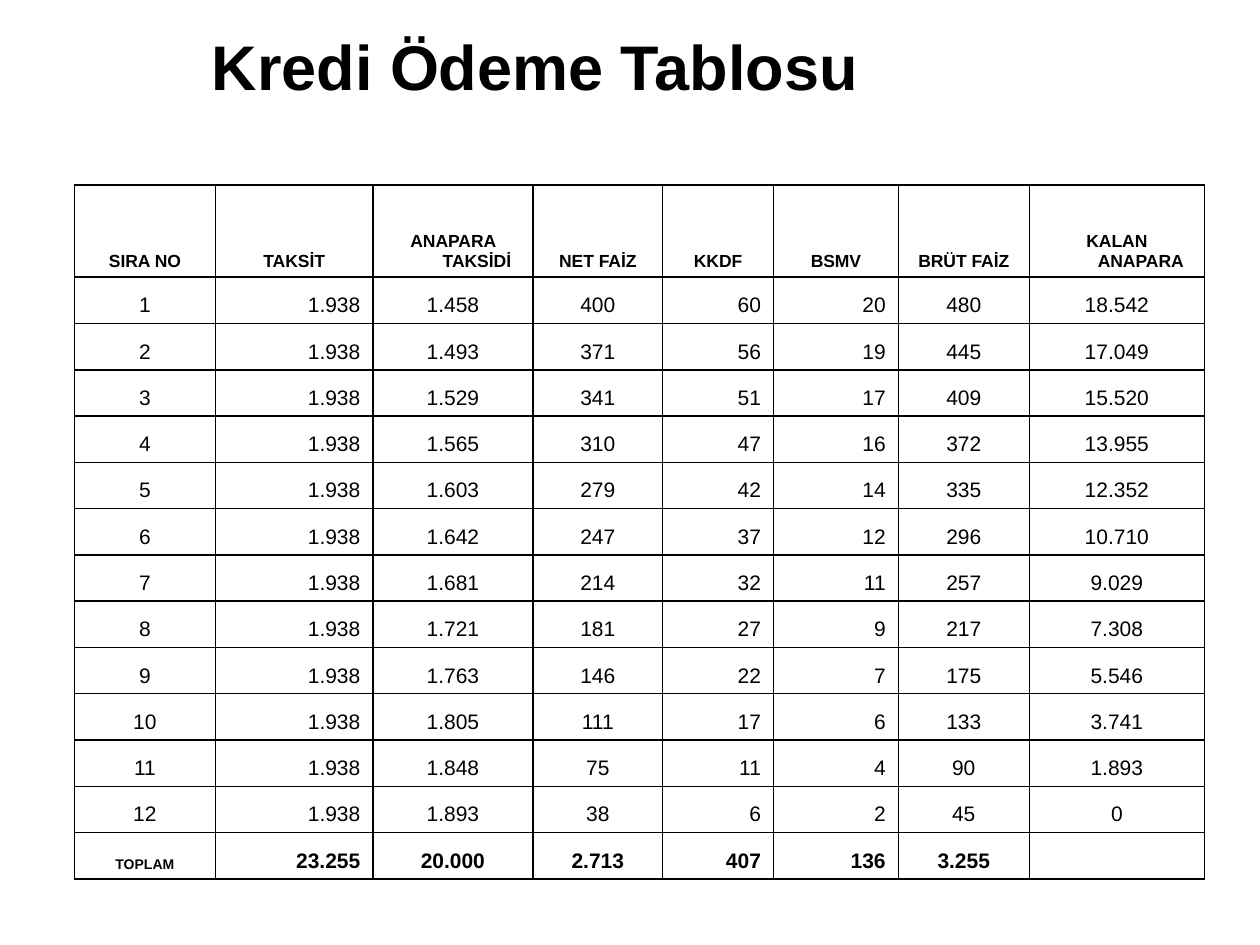
from lxml import etree
from pptx import Presentation, util as u
from pptx.dml.color import RGBColor
from pptx.enum import text as t
from pptx.oxml import ns

HEADS = ["SIRA NO", "TAKSİT", "ANAPARA TAKSİDİ", "NET FAİZ", "KKDF", "BSMV",
         "BRÜT FAİZ", "KALAN ANAPARA"]
LOANS = """1.458 400 60 20 480 18.542
1.493 371 56 19 445 17.049
1.529 341 51 17 409 15.520
1.565 310 47 16 372 13.955
1.603 279 42 14 335 12.352
1.642 247 37 12 296 10.710
1.681 214 32 11 257 9.029
1.721 181 27 9 217 7.308
1.763 146 22 7 175 5.546
1.805 111 17 6 133 3.741
1.848 75 11 4 90 1.893
1.893 38 6 2 45 0"""
TOTALS = ["TOPLAM", "23.255", "20.000", "2.713", "407", "136", "3.255", ""]
WIDTHS = [1.12, 1.25, 1.27, 1.03, 0.88, 0.99, 1.04, 1.39]
RIGHT = {1, 4, 5}
INK = "000000"


def color(code):
    """Turn a hex string into a colour."""
    return RGBColor.from_string(code)


def style(run, size, bold):
    """Format the font of a run."""
    look = {"name": "Arial", "size": u.Pt(size), "bold": bold}
    for key, value in look.items():
        setattr(run.font, key, value)
    run.font.color.rgb = color(INK)


def border(cell):
    """Draw a thin line on all four sides of a cell."""
    props = cell._tc.get_or_add_tcPr()
    for side in ("a:lnL", "a:lnR", "a:lnT", "a:lnB"):
        line = etree.SubElement(props, ns.qn(side), w=str(u.Pt(1)))
        fill = etree.SubElement(line, ns.qn("a:solidFill"))
        etree.SubElement(fill, ns.qn("a:srgbClr"), val=INK)


def write(cell, words, align, size, bold):
    """Fill one cell with bottom-aligned, hanging text."""
    border(cell)
    cell.fill.background()
    cell.margin_top = 0
    cell.vertical_anchor = t.MSO_ANCHOR.BOTTOM
    if not words:
        return
    para = cell.text_frame.paragraphs[0]
    para.alignment = align
    props = para._p.get_or_add_pPr()
    props.set("marL", str(u.Inches(0.38)))
    props.set("indent", str(u.Inches(-0.38)))
    run = para.add_run()
    run.text = words
    style(run, size, bold)


def title(slide, box):
    """Place the heading in the title placeholder."""
    shape = slide.shapes.title
    for key, value in zip(("left", "top", "width", "height"), box):
        setattr(shape, key, u.Inches(value))
    frame = shape.text_frame
    frame.vertical_anchor = t.MSO_ANCHOR.MIDDLE
    para = frame.paragraphs[0]
    para.alignment = t.PP_ALIGN.LEFT
    run = para.add_run()
    run.text = "Kredi Ödeme Tablosu"
    style(run, 36, True)


def plan(slide, box):
    """Place the payment table in its box."""
    loans = [[str(n), "1.938", *line.split()]
             for n, line in enumerate(LOANS.splitlines(), 1)]
    rows = [HEADS, *loans, TOTALS]
    last = len(rows) - 1
    table = slide.shapes.add_table(
        len(rows), len(HEADS), *map(u.Inches, box)).table
    for flag in ("first_row", "horz_banding"):
        setattr(table, flag, False)
    for col, width in zip(table.columns, WIDTHS):
        col.width = u.Inches(width)
    head = 0.73
    for r, row in enumerate(rows):
        table.rows[r].height = u.Inches((box[3] - head) / last if r else head)
        for c, words in enumerate(row):
            right = r > 0 and c in RIGHT
            align = t.PP_ALIGN.RIGHT if right else t.PP_ALIGN.CENTER
            size = 10 if r == 0 else 8 if words == "TOPLAM" else 12
            write(table.cell(r, c), words, align, size, r in (0, last))


def main():
    """Build and save the slide."""
    deck = Presentation()
    deck.slide_width, deck.slide_height = u.Inches(10), u.Inches(7.5)
    slide = deck.slides.add_slide(deck.slide_layouts[5])
    title(slide, (1.58, 0.07, 8.26, 0.9))
    plan(slide, (0.59, 1.47, 8.98, 5.51))
    deck.save("out.pptx")


if __name__ == "__main__":
    main()
